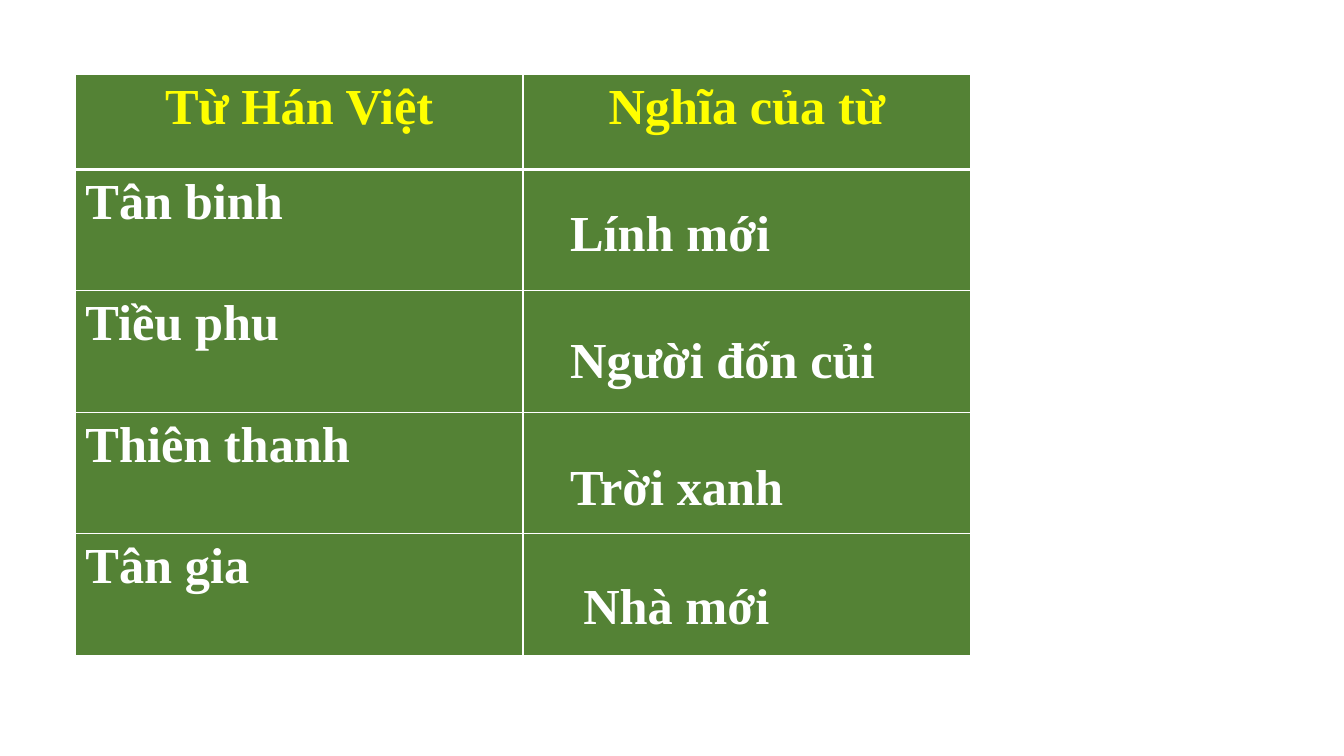
from lxml import etree
from pptx import Presentation
from pptx.dml.color import RGBColor
from pptx.enum import text as t
from pptx.oxml import ns
from pptx.util import Cm, Pt

GREEN, YELLOW, WHITE = "548235", "FFFF00", "FFFFFF"


def write(frame, wording, color=WHITE, align=t.PP_ALIGN.LEFT):
    paragraph = frame.paragraphs[0]
    paragraph.alignment = align
    run = paragraph.add_run()
    run.text = wording
    run.font.name, run.font.size, run.font.bold = "Times New Roman", Pt(36), True
    run.font.color.rgb = RGBColor.from_string(color)


def add_border(cell, side, points):
    """Draw a white line on one side (L, R, T or B); call before filling the cell."""
    line = etree.SubElement(cell._tc.get_or_add_tcPr(), ns.qn("a:ln" + side), w=str(Pt(points)))
    fill = etree.SubElement(line, ns.qn("a:solidFill"))
    etree.SubElement(fill, ns.qn("a:srgbClr"), val=WHITE)


prs = Presentation()
prs.slide_width, prs.slide_height = Cm(33.87), Cm(19.05)
slide = prs.slides.add_slide(prs.slide_layouts[6])

headings = ["Từ Hán Việt", "Nghĩa của từ"]
words = ["Tân binh", "Tiều phu", "Thiên thanh", "Tân gia"]
# meaning, left, top, width in cm
meanings = [
    ("Lính mới", 14.12, 4.95, 5.61),
    ("Người đốn củi", 14.12, 8.15, 8.26),
    ("Trời xanh", 14.12, 11.35, 5.94),
    ("Nhà mới", 14.45, 14.33, 5.26),
]

header_height, word_height = 2.4, 3.06
vocabulary = slide.shapes.add_table(
    len(words) + 1, len(headings), Cm(1.9), Cm(1.87),
    Cm(22.56), Cm(header_height + len(words) * word_height)).table
for row_number, row in enumerate(vocabulary.rows):
    row.height = Cm(word_height if row_number else header_height)
    for cell in row.cells:
        add_border(cell, "L", 1)
        add_border(cell, "R", 1)
        add_border(cell, "T", 3 if row_number == 1 else 1)
        add_border(cell, "B", 3 if row_number == 0 else 1)
        cell.fill.solid()
        cell.fill.fore_color.rgb = RGBColor.from_string(GREEN)

for column, heading in enumerate(headings):
    write(vocabulary.cell(0, column).text_frame, heading, color=YELLOW, align=t.PP_ALIGN.CENTER)
for row_number, word in enumerate(words, start=1):
    write(vocabulary.cell(row_number, 0).text_frame, word)

for meaning, left, top, width in meanings:
    frame = slide.shapes.add_textbox(Cm(left), Cm(top), Cm(width), Cm(1.8)).text_frame
    frame.word_wrap = False
    frame.auto_size = t.MSO_AUTO_SIZE.SHAPE_TO_FIT_TEXT
    write(frame, meaning)

prs.save("out.pptx")
